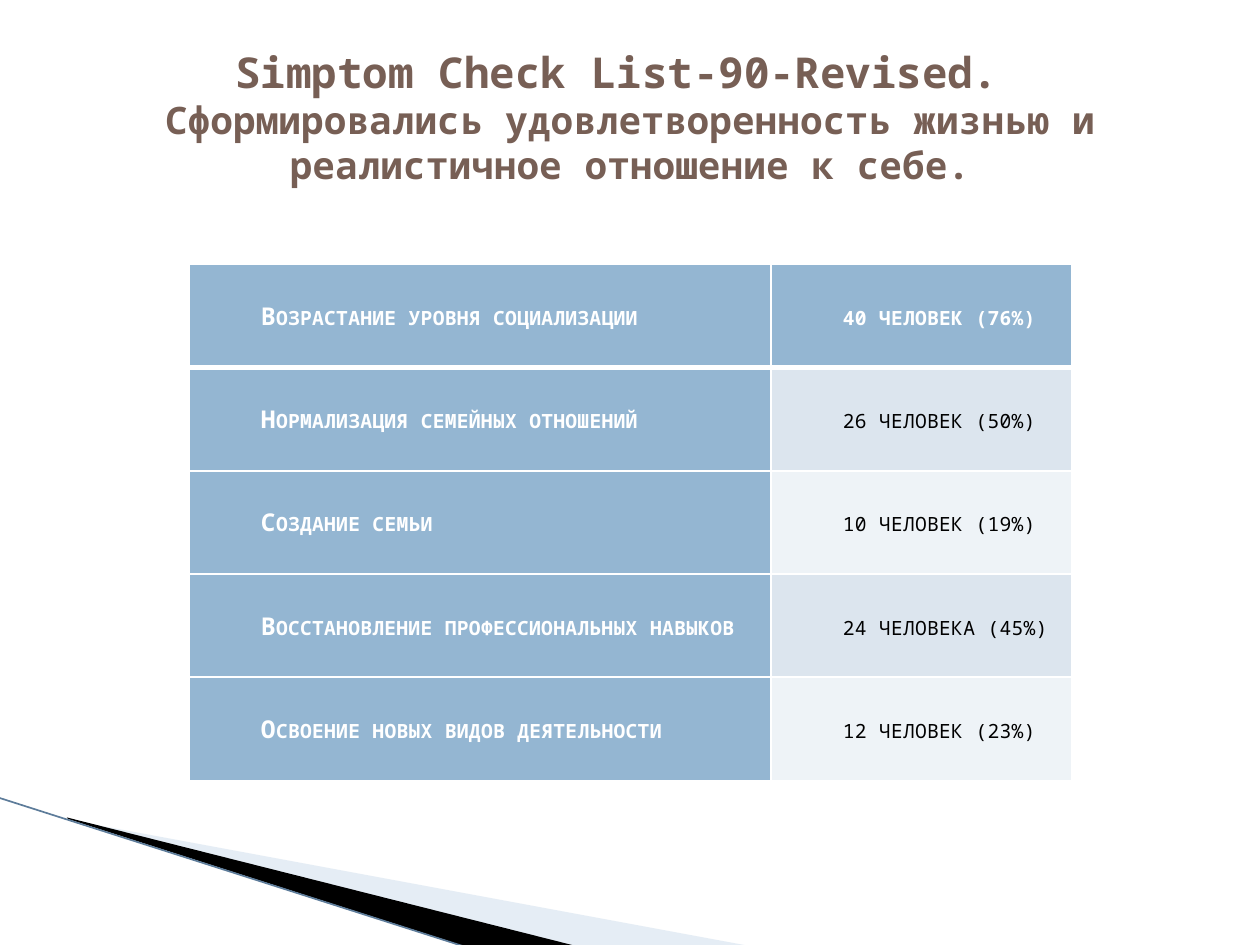
from lxml.etree import SubElement
from pptx import Presentation
from pptx.dml.color import RGBColor
from pptx.enum.shapes import MSO_CONNECTOR
from pptx.enum.text import MSO_ANCHOR, PP_ALIGN
from pptx.oxml.ns import qn
from pptx.util import Cm, Pt

FONT = "Noto Sans Mono"
WHITE = RGBColor(0xFF, 0xFF, 0xFF)
BLACK = RGBColor(0, 0, 0)
BROWN = RGBColor(0x77, 0x5F, 0x55)
BLUE = RGBColor(0x94, 0xB6, 0xD2)
BANDS = [RGBColor(0xDC, 0xE5, 0xEE), RGBColor(0xEE, 0xF3, 0xF7)]
PALE_BLUE = RGBColor(0xC0, 0xD3, 0xE6)
EDGE_BLUE = RGBColor(0x5D, 0x7C, 0x9A)

RESULTS = [
    ("Возрастание уровня социализации", "40 человек (76%)"),
    ("Нормализация семейных отношений", "26 человек (50%)"),
    ("Создание семьи", "10 человек (19%)"),
    ("Восстановление профессиональных навыков", "24 человека (45%)"),
    ("Освоение новых видов деятельности", "12 человек (23%)"),
]


def add_wedge(page, points, color, opacity=None):
    start, *rest = [(Cm(x), Cm(y)) for x, y in points]
    builder = page.shapes.build_freeform(*start)
    builder.add_line_segments(rest, close=True)
    wedge = builder.convert_to_shape()
    wedge.shadow.inherit = False
    wedge.fill.solid()
    wedge.fill.fore_color.rgb = color
    wedge.line.fill.background()
    if opacity is not None:
        fill_color = wedge._element.spPr.find(".//" + qn("a:srgbClr"))
        SubElement(fill_color, qn("a:alpha"), val=str(opacity * 1000))


def add_edge(page, start, end):
    edge = page.shapes.add_connector(
        MSO_CONNECTOR.STRAIGHT, *(Cm(value) for value in start + end))
    edge.line.color.rgb = EDGE_BLUE
    edge.line.width = Pt(0.95)
    SubElement(edge._element.spPr, qn("a:effectLst"))


def add_title(page):
    box = page.shapes.add_textbox(Cm(1.27), Cm(0.76), Cm(22.86), Cm(3.18))
    frame = box.text_frame
    frame.word_wrap = True
    frame.vertical_anchor = MSO_ANCHOR.MIDDLE
    para = frame.paragraphs[0]
    para.alignment = PP_ALIGN.CENTER
    para.font.name = FONT
    para.font.bold = True
    para.font.color.rgb = BROWN
    heading = para.add_run()
    heading.text = "Simptom Check List-90-Revised. "
    heading.font.size = Pt(24.3)
    para.add_line_break()
    finding = para.add_run()
    finding.text = ("Сформировались удовлетворенность жизнью и "
                    "реалистичное отношение к себе.")
    finding.font.size = Pt(21.6)


def set_borders(cell, bottom):
    properties = cell._tc.get_or_add_tcPr()
    for side, width in (("L", 1), ("R", 1), ("T", 1), ("B", bottom)):
        line = SubElement(properties, qn("a:ln" + side), w=str(Pt(width)))
        fill = SubElement(line, qn("a:solidFill"))
        SubElement(fill, qn("a:srgbClr"), val=str(WHITE))


def fill_cell(cell, text, fill, color, bold, bottom):
    set_borders(cell, bottom)
    cell.fill.solid()
    cell.fill.fore_color.rgb = fill
    cell.margin_left = cell.margin_right = Cm(0.18)
    cell.margin_top = cell.margin_bottom = 0
    cell.vertical_anchor = MSO_ANCHOR.MIDDLE
    para = cell.text_frame.paragraphs[0]
    para._p.get_or_add_pPr().set("marL", str(Cm(1.27)))
    span = para.add_run()
    span.text = text
    font = span.font
    font.name, font.size, font.bold = FONT, Pt(14), bold
    font.color.rgb = color
    # Small capitals, slightly spaced
    run_properties = span._r.get_or_add_rPr()
    run_properties.set("cap", "small")
    run_properties.set("spc", "20")


def add_results(page):
    widths = [Cm(11.73), Cm(6.07)]
    row_height = Cm(2.08)
    table = page.shapes.add_table(
        len(RESULTS), len(widths), Cm(3.81), Cm(5.33),
        sum(widths), row_height * len(RESULTS)).table
    for column, width in zip(table.columns, widths):
        column.width = width
    for i, texts in enumerate(RESULTS):
        table.rows[i].height = row_height
        for j, text in enumerate(texts):
            header = i == 0 or j == 0
            fill_cell(table.cell(i, j), text,
                      fill=BLUE if header else BANDS[(i - 1) % 2],
                      color=WHITE if header else BLACK,
                      bold=header, bottom=3 if i == 0 else 1)


def main():
    deck = Presentation()
    deck.slide_width, deck.slide_height = Cm(25.4), Cm(19.05)
    page = deck.slides.add_slide(deck.slide_layouts[6])

    # Corner decoration
    add_wedge(page, [(1.4, 16.53), (15.11, 19.07), (11.58, 19.07),
                     (1.4, 16.51)], PALE_BLUE, opacity=40)
    add_wedge(page, [(1.35, 16.48), (11.61, 19.07), (9.45, 19.1),
                     (1.37, 16.51)], BLACK)
    add_edge(page, (-0.03, 16.08), (9.42, 19.1))

    # Content
    add_results(page)
    add_title(page)
    deck.save("out.pptx")


if __name__ == "__main__":
    main()
